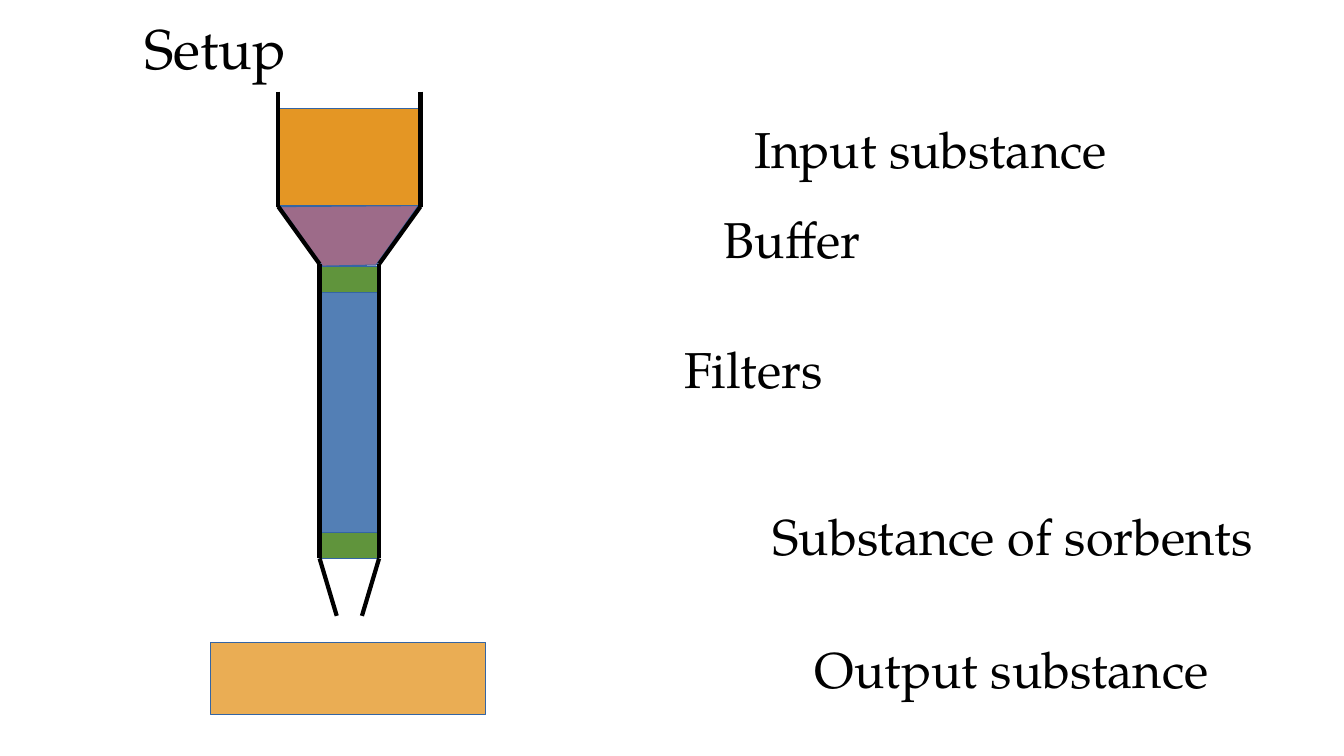
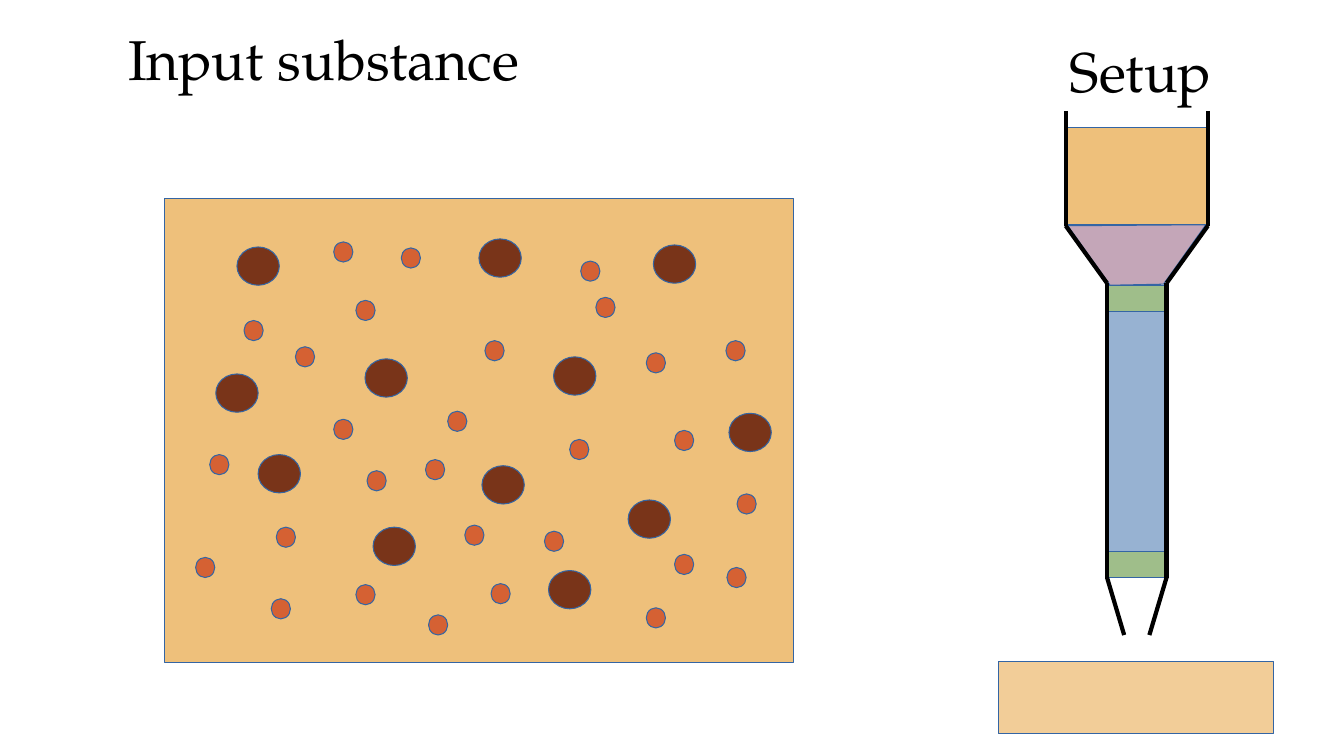
"""Build two slides about a filter column and its input substance."""
import lxml.etree
import pptx
import pptx.dml.color
import pptx.enum.shapes
import pptx.enum.text
import pptx.oxml.ns
import pptx.util

Inches = pptx.util.Inches
SHAPES = pptx.enum.shapes.MSO_SHAPE
FONT = "TeX Gyre Pagella"
BLACK, OUTLINE = "000000", "3465A4"
INPUT, BUFFER, FILTER, SORBENT = "E49624", "9D6B89", "60943C", "537FB5"
OUTPUT, LARGE, SMALL = "EAAD54", "793419", "D56133"

LABELS = [
    ("Input substance", (7.43, 1.12, 5.01, 0.7)),
    ("Buffer", (7.13, 2.02, 1.73, 0.7)),
    ("Filters", (6.74, 3.31, 1.73, 0.7)),
    ("Substance of sorbents", (7.61, 4.96, 5.01, 0.7)),
    ("Output substance", (8.03, 6.28, 5.01, 0.7)),
]
COLUMN_PARTS = [
    (OUTPUT, (2.09, 6.37, 2.73, 0.72)),
    (FILTER, (3.17, 2.64, 0.58, 0.26)),
    (SORBENT, (3.17, 2.9, 0.58, 2.38)),
    (FILTER, (3.17, 5.28, 0.58, 0.26)),
    (INPUT, (2.76, 1.08, 1.42, 0.96)),
]
FUNNEL = [(2.78, 2.05), (4.15, 2.04), (3.73, 2.63), (3.2, 2.64)]
LEFT_WALL = [(2.76, 0.91), (2.76, 2.05), (3.17, 2.62), (3.17, 5.54), (3.34, 6.11)]
WALL_SUM = 6.93
RIGHT_WALL = [(WALL_SUM - x, y) for x, y in LEFT_WALL]

SAMPLE = (1.63, 1.97, 6.24, 4.6)
PARTICLES = [
    (LARGE, (0.42, 0.38), [
        (2.35, 2.45), (3.62, 3.56), (4.75, 2.37), (6.48, 2.43), (5.49, 3.54),
        (2.14, 3.71), (7.23, 4.1), (6.23, 4.96), (3.7, 5.23), (2.56, 4.51),
        (5.44, 5.66), (4.78, 4.62)]),
    (SMALL, (0.19, 0.2), [
        (3.31, 2.4), (3.53, 2.98), (3.98, 2.46), (5.91, 2.95), (5.76, 2.59),
        (4.81, 3.38), (7.2, 3.38), (6.41, 3.5), (6.69, 4.27), (5.65, 4.36),
        (4.44, 4.08), (4.22, 4.56), (2.93, 3.44), (2.42, 3.18), (3.31, 4.16),
        (3.64, 4.67), (7.31, 4.9), (6.69, 5.5), (7.21, 5.63), (6.41, 6.03),
        (5.4, 5.27), (4.87, 5.79), (4.61, 5.21), (4.25, 6.1), (3.53, 5.8),
        (2.74, 5.23), (2.69, 5.94), (1.94, 5.53), (2.08, 4.51)]),
]


def rgb(value):
    return pptx.dml.color.RGBColor.from_string(value)


def inches(values):
    return [Inches(value) for value in values]


def paint(shape, color, opacity=100):
    shape.shadow.inherit = False
    shape.fill.solid()
    shape.fill.fore_color.rgb = rgb(color)
    shape.line.color.rgb = rgb(OUTLINE)
    shape.line.width = pptx.util.Pt(0.75)
    if opacity < 100:
        tint = shape.fill._xPr.find(".//" + pptx.oxml.ns.qn("a:srgbClr"))
        alpha = lxml.etree.SubElement(tint, pptx.oxml.ns.qn("a:alpha"))
        alpha.set("val", str(opacity * 1000))


def add_part(slide, kind, box, color, opacity=100):
    paint(slide.shapes.add_shape(kind, *inches(box)), color, opacity)


def write(slide, text, box, size=36, color=BLACK, title=False):
    holder = slide.shapes.title if title else slide.shapes.add_textbox(*inches(box))
    holder.left, holder.top, holder.width, holder.height = inches(box)
    frame = holder.text_frame
    frame.word_wrap = True
    frame.auto_size = pptx.enum.text.MSO_AUTO_SIZE.SHAPE_TO_FIT_TEXT
    frame.vertical_anchor = pptx.enum.text.MSO_ANCHOR.TOP
    frame.margin_left = frame.margin_right = Inches(0.05)
    frame.margin_top = frame.margin_bottom = Inches(0.05)
    frame.text = text
    paragraph = frame.paragraphs[0]
    paragraph.alignment = pptx.enum.text.PP_ALIGN.LEFT
    font = paragraph.runs[0].font
    font.name, font.size, font.color.rgb = FONT, pptx.util.Pt(size), rgb(color)


def add_wall(slide, points):
    wall = slide.shapes.add_group_shape()
    for start, end in zip(points, points[1:]):
        edge = wall.shapes.add_connector(
            pptx.enum.shapes.MSO_CONNECTOR.STRAIGHT, *inches(start + end))
        edge.line.color.rgb = rgb(BLACK)
        edge.line.width = pptx.util.Pt(3)
        lxml.etree.SubElement(edge._element.spPr, pptx.oxml.ns.qn("a:effectLst"))


def add_column(slide, dx=0, dy=0, opacity=100):
    def moved(points):
        return [(x + dx, y + dy) for x, y in points]

    for color, (left, top, width, height) in COLUMN_PARTS:
        box = (left + dx, top + dy, width, height)
        add_part(slide, SHAPES.RECTANGLE, box, color, opacity)
    corners = [inches(point) for point in moved(FUNNEL)]
    outline = slide.shapes.build_freeform(*corners[0])
    outline.add_line_segments(corners[1:], close=True)
    paint(outline.convert_to_shape(), BUFFER, opacity)
    for points in (LEFT_WALL, RIGHT_WALL):
        add_wall(slide, moved(points))


def add_slide(deck, title, box):
    slide = deck.slides.add_slide(deck.slide_layouts[5])
    write(slide, title, box, size=40, title=True)
    return slide


def main():
    deck = pptx.Presentation()
    deck.slide_width, deck.slide_height = inches((13.33, 7.5))

    setup = add_slide(deck, "Setup", (1.38, 0.08, 2.67, 0.77))
    add_column(setup)
    for text, box in LABELS:
        write(setup, text, box)

    substance = add_slide(deck, "Input substance", (1.22, 0.19, 4.43, 0.77))
    add_column(substance, dx=7.81, dy=0.19, opacity=60)
    write(substance, "Setup", (10.56, 0.31, 2.67, 0.77), size=40)
    add_part(substance, SHAPES.RECTANGLE, SAMPLE, INPUT, opacity=60)
    for color, size, places in PARTICLES:
        for place in places:
            add_part(substance, SHAPES.OVAL, place + size, color)

    deck.save("out.pptx")


if __name__ == "__main__":
    main()
